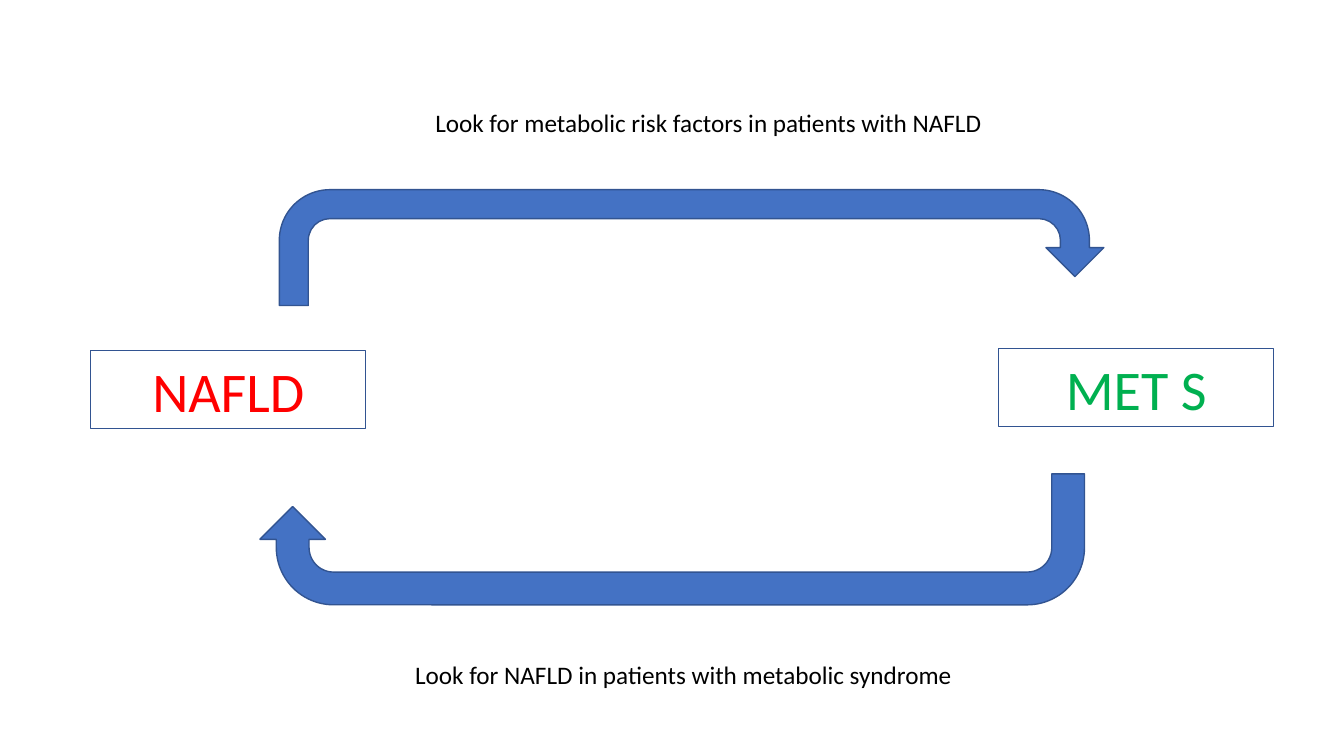
import dataclasses

import pptx
import pptx.dml.color
import pptx.enum.shapes
import pptx.enum.text
import pptx.util

Cm = pptx.util.Cm
Shape = pptx.enum.shapes.MSO_SHAPE
Align = pptx.enum.text.PP_ALIGN
Anchor = pptx.enum.text.MSO_ANCHOR

# Content: positions are (left, top) in centimetres
CONDITIONS = [
    ("NAFLD", (2.29, 8.84), "FF0000"),
    ("MET S", (25.17, 8.79), "00B050"),
]
CAPTIONS = [
    ("Look for metabolic risk factors in patients with NAFLD", (10.72, 2.57)),
    ("Look for NAFLD in patients with metabolic syndrome", (10.21, 16.48)),
]
# Left, top, height, rotation
ARROWS = [
    (7.04, 4.78, 2.92, 0),
    (6.55, 11.94, 3.3, 180),
]
SLIDE_SIZE = (33.87, 19.05)
CONDITION_SIZE = (6.93, 1.96)
CAPTION_SIZE = (14.43, 1.02)
ARROW_WIDTH = 20.78


@dataclasses.dataclass(frozen=True)
class Theme:
    font: str = "Calibri"
    arrow: str = "4472C4"
    outline: str = "325491"
    text: str = "000000"
    condition_size: int = 40
    caption_size: int = 18
    arrow_line: float = 1
    box_line: float = 0.75


THEME = Theme()


def rgb(value):
    return pptx.dml.color.RGBColor.from_string(value)


def write(box, text, *, size, color, align=Align.LEFT, anchor=Anchor.TOP):
    frame = box.text_frame
    frame.word_wrap = True
    frame.vertical_anchor = anchor
    para = frame.paragraphs[0]
    para.alignment = align
    span = para.add_run()
    span.text = text
    span.font.name = THEME.font
    span.font.size = pptx.util.Pt(size)
    span.font.color.rgb = rgb(color)


def add_outlined(page, kind, place, size, line_width):
    shape = page.shapes.add_shape(kind, *map(Cm, place + size))
    shape.shadow.inherit = False
    shape.line.color.rgb = rgb(THEME.outline)
    shape.line.width = pptx.util.Pt(line_width)
    return shape


def main():
    deck = pptx.Presentation()
    deck.slide_width, deck.slide_height = map(Cm, SLIDE_SIZE)
    page = deck.slides.add_slide(deck.slide_layouts[6])

    # Arrows of the cycle
    for left, top, height, rotation in ARROWS:
        arrow = add_outlined(page, Shape.U_TURN_ARROW, (left, top),
                             (ARROW_WIDTH, height), THEME.arrow_line)
        arrow.fill.solid()
        arrow.fill.fore_color.rgb = rgb(THEME.arrow)
        arrow.rotation = rotation

    # The two conditions
    for text, place, color in CONDITIONS:
        box = add_outlined(page, Shape.RECTANGLE, place, CONDITION_SIZE, THEME.box_line)
        box.fill.background()
        write(box, text, size=THEME.condition_size, color=color,
              align=Align.CENTER, anchor=Anchor.MIDDLE)

    # Captions above and below the cycle
    for text, place in CAPTIONS:
        box = page.shapes.add_textbox(*map(Cm, place + CAPTION_SIZE))
        write(box, text, size=THEME.caption_size, color=THEME.text)

    deck.save("out.pptx")


if __name__ == "__main__":
    main()
